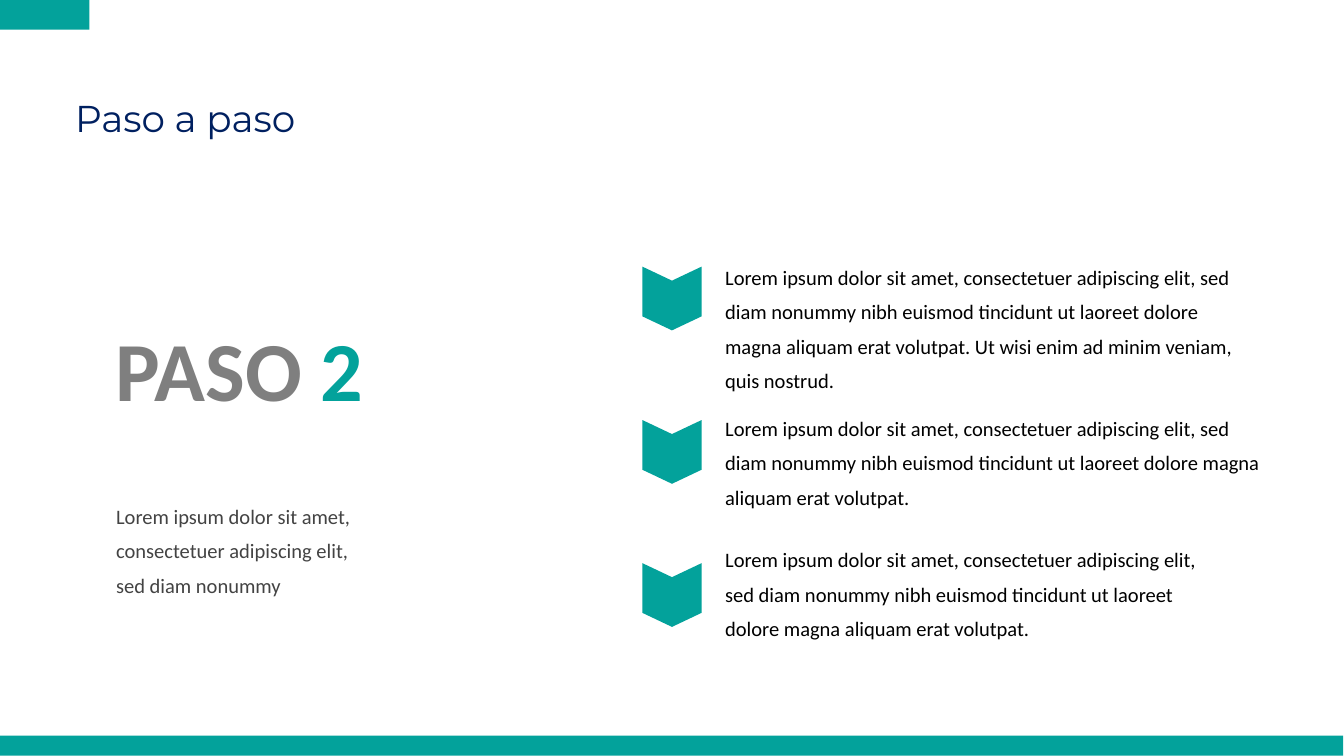
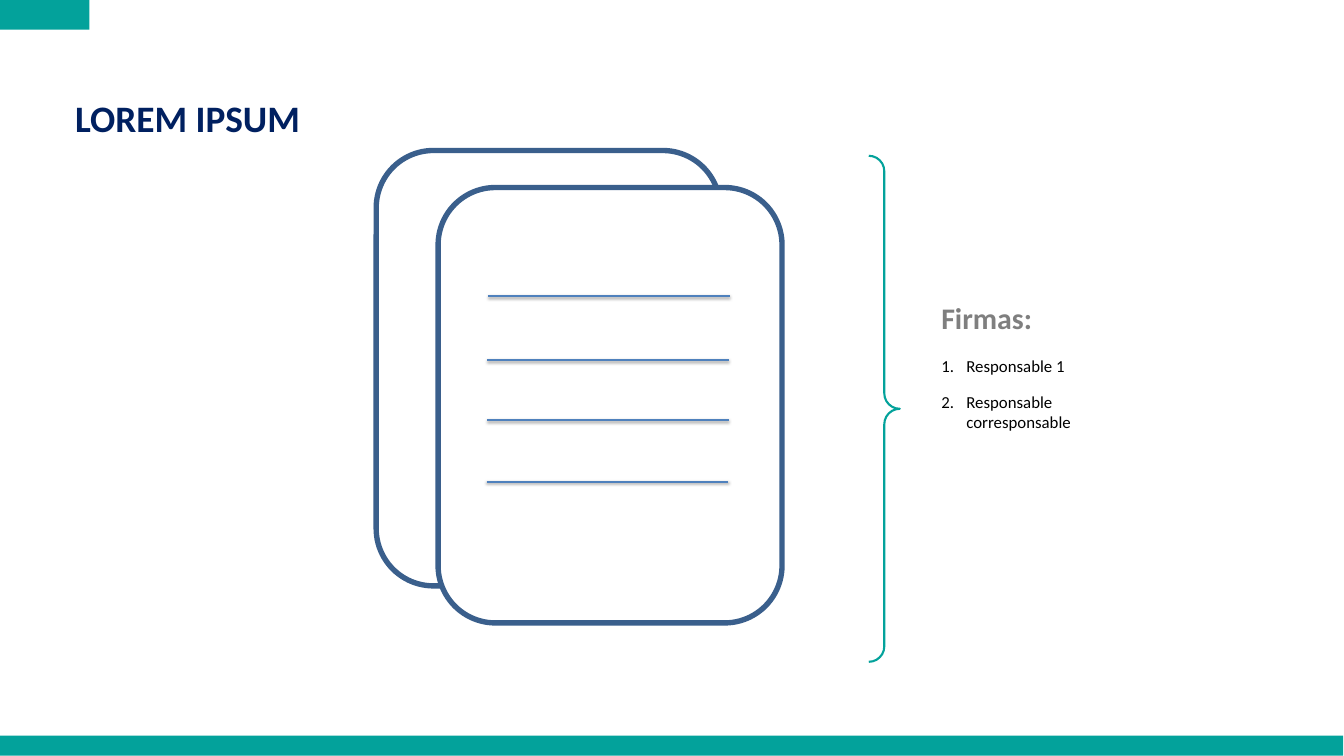
"""Build two slides: a step-by-step page and a signed document page."""
from dataclasses import dataclass

from lxml.etree import SubElement
from pptx import Presentation
from pptx.dml.color import RGBColor
from pptx.enum.shapes import MSO_CONNECTOR, MSO_SHAPE
from pptx.enum.text import MSO_AUTO_SIZE, PP_ALIGN
from pptx.oxml.ns import qn
from pptx.shapes.autoshape import Shape
from pptx.slide import Slide
from pptx.util import Cm, Pt

COLORS = {
    "teal": "03A29B",
    "navy": "002060",
    "gray": "7F7F7F",
    "dark": "434343",
    "black": "000000",
    "white": "FFFFFF",
    "outline": "3A5F8C",
    "rule": "4F81BD",
}
BODY_FONT = "Calibri"
TITLE_FONT = "Montserrat"
LOREM = "Lorem ipsum dolor sit amet, consectetuer adipiscing elit, sed diam nonummy"
LOREM_LONG = f"{LOREM} nibh euismod tincidunt ut laoreet dolore magna aliquam erat volutpat."


@dataclass(frozen=True)
class Area:
    left: float
    top: float
    width: float
    height: float

    def lengths(self) -> tuple[Cm, Cm, Cm, Cm]:
        return Cm(self.left), Cm(self.top), Cm(self.width), Cm(self.height)


@dataclass(frozen=True)
class Style:
    size: float
    color: str
    bold: bool = False
    font: str = BODY_FONT


@dataclass(frozen=True)
class Step:
    text: str
    area: Area
    chevron_top: float


STEPS = [
    Step(f"{LOREM_LONG} Ut wisi enim ad minim veniam, quis nostrud.",
         Area(27.41, 9.63, 19.63, 4.9), 10.08),
    Step(LOREM_LONG, Area(27.41, 15.34, 20.52, 3.58), 15.88),
    Step(LOREM_LONG, Area(27.41, 20.32, 18.77, 3.58), 21.29),
]
SHEETS = [
    (Area(14.22, 5.69, 13, 16.46), None),
    (Area(16.56, 7.09, 13, 16.46), "white"),
]
RULE_STARTS = [(18.44, 11.18), (18.42, 13.61), (18.42, 15.88), (18.39, 18.21)]
RULE_LENGTH = 9.14
SIGNERS = [("Responsable 1", 22), ("Responsable corresponsable", 17)]


def rgb(name: str) -> RGBColor:
    return RGBColor.from_string(COLORS[name])


def style_span(span, style: Style) -> None:
    span.font.size = Pt(style.size)
    span.font.name = style.font
    span.font.bold = style.bold
    span.font.color.rgb = rgb(style.color)


def add_text(page: Slide, area: Area, text: str, style: Style,
             spacing: float = 1.4, margins: tuple[float, float] = (0, 0)) -> Shape:
    box = page.shapes.add_textbox(*area.lengths())
    frame = box.text_frame
    frame.word_wrap = True
    frame.auto_size = MSO_AUTO_SIZE.SHAPE_TO_FIT_TEXT
    frame.margin_left = frame.margin_right = Cm(margins[0])
    frame.margin_top = frame.margin_bottom = Cm(margins[1])
    frame.text = text
    para = frame.paragraphs[0]
    para.line_spacing = spacing
    style_span(para.runs[0], style)
    return box


def paint(shape: Shape, fill: str | None, line: str | None = None, width: float = 0) -> None:
    shape.shadow.inherit = False
    if fill:
        shape.fill.solid()
        shape.fill.fore_color.rgb = rgb(fill)
    else:
        shape.fill.background()
    if line:
        shape.line.color.rgb = rgb(line)
        shape.line.width = Pt(width)
    else:
        shape.line.fill.background()


def add_page(deck, title: str, style: Style, title_width: float) -> Slide:
    page = deck.slides.add_slide(deck.slide_layouts[6])
    for area in (Area(0, 0, 3.38, 1.12), Area(0, 27.81, 50.77, 0.76)):
        paint(page.shapes.add_shape(MSO_SHAPE.RECTANGLE, *area.lengths()), "teal")
    add_text(page, Area(2.84, 3.25, title_width, 1.7), title, style, spacing=1.21)
    return page


def add_chevron(page: Slide, left: float, top: float) -> None:
    width, height, notch = 2.24, 2.41, 0.53
    middle, right = left + width / 2, left + width
    shoulder = top + height - notch
    points = [(left, top), (middle, top + notch), (right, top),
              (right, shoulder), (middle, top + height)]
    builder = page.shapes.build_freeform(Cm(left), Cm(shoulder))
    builder.add_line_segments([(Cm(x), Cm(y)) for x, y in points])
    paint(builder.convert_to_shape(), "teal")


def add_rule(page: Slide, left: float, top: float) -> None:
    rule = page.shapes.add_connector(
        MSO_CONNECTOR.STRAIGHT, Cm(left), Cm(top), Cm(left + RULE_LENGTH), Cm(top))
    rule.line.color.rgb = rgb("rule")
    rule.line.width = Pt(0)
    effects = SubElement(rule.line._get_or_add_ln().getparent(), qn("a:effectLst"))
    shadow = SubElement(effects, qn("a:outerShdw"), blurRad=str(Pt(3.1)),
                        dist=str(Pt(1.6)), dir="5400000", rotWithShape="0")
    color = SubElement(shadow, qn("a:srgbClr"), val=COLORS["black"])
    SubElement(color, qn("a:alpha"), val="38000")


def add_signer(box: Shape, name: str, gap: float) -> None:
    para = box.text_frame.add_paragraph()
    para.text = name
    properties = para._p.get_or_add_pPr()
    properties.set("marL", str(Cm(0.95)))
    properties.set("indent", str(-Cm(0.95)))
    bullet_color = SubElement(properties, qn("a:buClr"))
    SubElement(bullet_color, qn("a:srgbClr"), val=COLORS["black"])
    SubElement(properties, qn("a:buFont"), typeface="+mj-lt")
    SubElement(properties, qn("a:buAutoNum"), type="arabicPeriod")
    para.space_before = Pt(gap)
    style_span(para.runs[0], Style(18, "black"))


def build_steps(deck) -> None:
    page = add_page(deck, "Paso a paso", Style(40, "navy", font=TITLE_FONT), 42.01)
    add_text(page, Area(4.39, 18.67, 8.89, 3.58), LOREM, Style(22, "dark"))
    heading = add_text(page, Area(3.38, 10.49, 11.35, 5.38), "PASO ", Style(90, "gray", True))
    para = heading.text_frame.paragraphs[0]
    para.alignment = PP_ALIGN.CENTER
    number = para.add_run()
    number.text = "2"
    style_span(number, Style(90, "teal", True))
    for step in STEPS:
        add_text(page, step.area, step.text, Style(22, "black"))
        add_chevron(page, 24.28, step.chevron_top)


def build_signatures(deck) -> None:
    page = add_page(deck, "LOREM IPSUM", Style(40, "navy", True), 25.93)
    box = add_text(page, Area(35.33, 11.18, 5.56, 5.31), "Firmas:", Style(32, "gray", True),
                   spacing=1.0, margins=(0.25, 0.13))
    for name, gap in SIGNERS:
        add_signer(box, name, gap)
    brace = page.shapes.add_shape(
        MSO_SHAPE.RIGHT_BRACE, *Area(32.84, 5.89, 1.17, 19.13).lengths())
    brace.adjustments[0] = 0.5
    brace.adjustments[1] = 0.5
    paint(brace, None, "teal", 2.25)
    for area, fill in SHEETS:
        sheet = page.shapes.add_shape(MSO_SHAPE.ROUNDED_RECTANGLE, *area.lengths())
        paint(sheet, fill, "outline", 5.75)
    for left, top in RULE_STARTS:
        add_rule(page, left, top)


def main() -> None:
    deck = Presentation()
    deck.slide_width, deck.slide_height = Cm(50.8), Cm(28.58)
    build_steps(deck)
    build_signatures(deck)
    deck.save("out.pptx")


if __name__ == "__main__":
    main()
